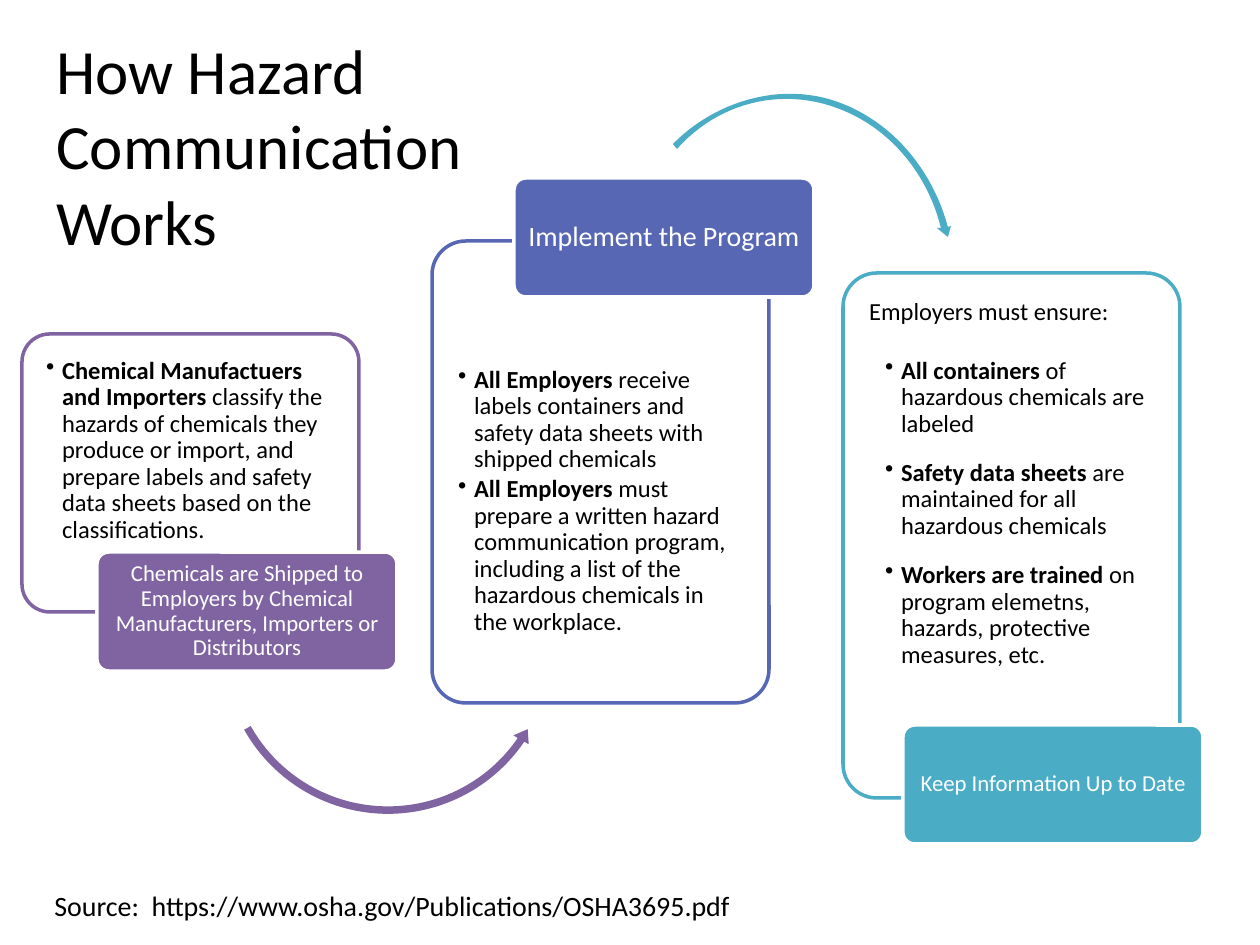
from lxml.etree import SubElement
from pptx import Presentation
from pptx.dml.color import RGBColor
from pptx.enum.shapes import MSO_SHAPE
from pptx.enum.text import MSO_ANCHOR, PP_ALIGN
from pptx.oxml.ns import qn
from pptx.util import Emu, Pt

EMU_PER_PX = 914400 / 126
COLORS = {"purple": "8064A2", "indigo": "5767B4", "teal": "4BACC6",
          "white": "FFFFFF", "black": "000000"}
CORNER = 0.1
# A rounded rectangle insets its text by this share of the corner radius
CORNER_TEXT_INSET = 0.29


def px(length):
    return Emu(round(length * EMU_PER_PX))


def curve(start, first, second, end, steps=24):
    """Points along a cubic curve, without its start."""
    points = []
    for step in range(1, steps + 1):
        t = step / steps
        weights = ((1 - t) ** 3, 3 * t * (1 - t) ** 2, 3 * t * t * (1 - t), t ** 3)
        points.append(tuple(sum(weight * point[axis] for weight, point
                                in zip(weights, (start, first, second, end)))
                            for axis in (0, 1)))
    return points


class SlideBuilder:
    font = "Calibri"

    def __init__(self, slide):
        self.shapes = slide.shapes

    def color(self, name):
        return RGBColor.from_string(COLORS[name])

    def paint(self, shape, fill, line=None):
        shape.shadow.inherit = False
        shape.fill.solid()
        shape.fill.fore_color.rgb = self.color(fill)
        if line:
            shape.line.color.rgb = self.color(line)
            shape.line.width = Pt(2)
        else:
            shape.line.fill.background()

    def add_spans(self, para, spans, size, color="black", **formats):
        for name, value in formats.items():
            setattr(para, name, value)
        for text, bold in spans:
            span = para.add_run()
            span.text = text
            values = {"name": self.font, "size": Pt(size), "bold": bold}
            for name, value in values.items():
                setattr(span.font, name, value)
            span.font.color.rgb = self.color(color)

    def bullet(self, para, indent):
        properties = para._p.get_or_add_pPr()
        properties.set("marL", str(px(indent)))
        properties.set("indent", str(-px(16)))
        SubElement(properties, qn("a:buChar")).set("char", "•")

    def rounded(self, box, insets, anchor, fill, line):
        shape = self.shapes.add_shape(MSO_SHAPE.ROUNDED_RECTANGLE, *map(px, box))
        shape.adjustments[0] = CORNER
        self.paint(shape, fill, line)
        built_in = CORNER_TEXT_INSET * CORNER * min(box[2:])
        frame = shape.text_frame
        for side, inset in zip(("left", "top", "right", "bottom"), insets):
            setattr(frame, f"margin_{side}", px(inset - built_in))
        frame.word_wrap = True
        frame.vertical_anchor = anchor
        return shape

    def panel(self, box, insets, line, paragraphs):
        """Outlined card; each paragraph is (bullet indent, points after, spans)."""
        shape = self.rounded(box, insets, MSO_ANCHOR.TOP, "white", line)
        fill = shape._element.spPr.find(qn("a:solidFill"))
        SubElement(fill[0], qn("a:alpha")).set("val", "90000")
        frame = shape.text_frame
        for number, (indent, after, spans) in enumerate(paragraphs):
            para = frame.add_paragraph() if number else frame.paragraphs[0]
            self.add_spans(para, spans, 14, alignment=PP_ALIGN.LEFT,
                           line_spacing=0.9, space_after=Pt(after))
            if indent:
                self.bullet(para, indent)

    def caption(self, left, top, fill, text, size):
        shape = self.rounded((left, top, 300, 119), (6, 6, 6, 6),
                             MSO_ANCHOR.MIDDLE, fill, "white")
        self.add_spans(shape.text_frame.paragraphs[0], [(text, False)], size, "white",
                       alignment=PP_ALIGN.CENTER, line_spacing=0.9)

    def circular_arrow(self, box, fill, adjustments):
        shape = self.shapes.add_shape(MSO_SHAPE.LEFT_CIRCULAR_ARROW, *map(px, box))
        for number, value in enumerate(adjustments):
            shape.adjustments[number] = value
        self.paint(shape, fill)

    def outline(self, points, fill):
        start, *rest = [(px(x), px(y)) for x, y in points]
        builder = self.shapes.build_freeform(*start)
        builder.add_line_segments(rest, close=True)
        self.paint(builder.convert_to_shape(), fill)

    def text(self, box, lines, size):
        frame = self.shapes.add_textbox(*map(px, box)).text_frame
        frame.word_wrap = True
        para = frame.paragraphs[0]
        for number, line in enumerate(lines):
            if number:
                para.add_line_break()
            self.add_spans(para, [(line, False)], size)


def main():
    deck = Presentation()
    deck.slide_width, deck.slide_height = px(1260), px(945)
    page = SlideBuilder(deck.slides.add_slide(deck.slide_layouts[6]))

    # Step 1: shipping
    page.panel((22, 334, 337, 278), (24, 24, 24, 83), "purple", [
        (16, 2, [("Chemical Manufactuers and Importers ", True),
                 ("classify the hazards of chemicals they produce or import, and "
                  "prepare labels and safety data sheets based on the "
                  "classifications.", False)])])
    page.circular_arrow((218, 479, 340, 340), "purple",
                        (0.022, 2.674, 20.59, 90.405, 0.026))
    page.caption(97, 552, "purple", "Chemicals are Shipped to Employers by Chemical "
                 "Manufacturers, Importers or Distributors", 13)

    # Step 2: program
    page.panel((432, 241, 337, 462), (26, 126, 26, 26), "indigo", [
        (16, 2, [("All Employers ", True),
                 ("receive labels containers and safety data sheets with shipped "
                  "chemicals", False)]),
        (16, 2, [("All Employers ", True),
                 ("must prepare a written hazard communication program, including "
                  "a list of the hazardous chemicals in the workplace.", False)])])
    outer = [(673, 144), (714, 102), (780, 81), (838, 102),
             (891, 121), (932, 168), (948, 227)]
    head = [(951, 226), (948, 237), (937, 228), (941, 228)]
    inner = [head[-1], (927, 171), (887, 126), (837, 108),
             (780, 87), (718, 103), (677, 149)]
    page.outline([outer[0], *curve(*outer[:4]), *curve(*outer[3:]), *head,
                  *curve(*inner[:4]), *curve(*inner[3:])], "teal")
    page.caption(514, 178, "indigo", "Implement the Program", 16)

    # Step 3: upkeep
    page.panel((843, 273, 337, 525), (26, 26, 26, 140), "teal", [
        (0, 18.5, [("Employers must ensure:", False)]),
        (32, 13, [("All containers ", True),
                  ("of hazardous chemicals are labeled", False)]),
        (32, 13, [("Safety data sheets ", True),
                  ("are maintained for all hazardous chemicals", False)]),
        (32, 2, [("Workers are trained ", True),
                 ("on program elemetns, hazards, protective measures, etc.", False)])])
    page.caption(903, 725, "teal", "Keep Information Up to Date", 13)

    # Title and source
    page.text((44, 25, 630, 158), ["How Hazard Communication ", "Works"], 36)
    page.text((42, 882, 1197, 47),
              ["Source:  https://www.osha.gov/Publications/OSHA3695.pdf"], 16)

    deck.save("out.pptx")


if __name__ == "__main__":
    main()
